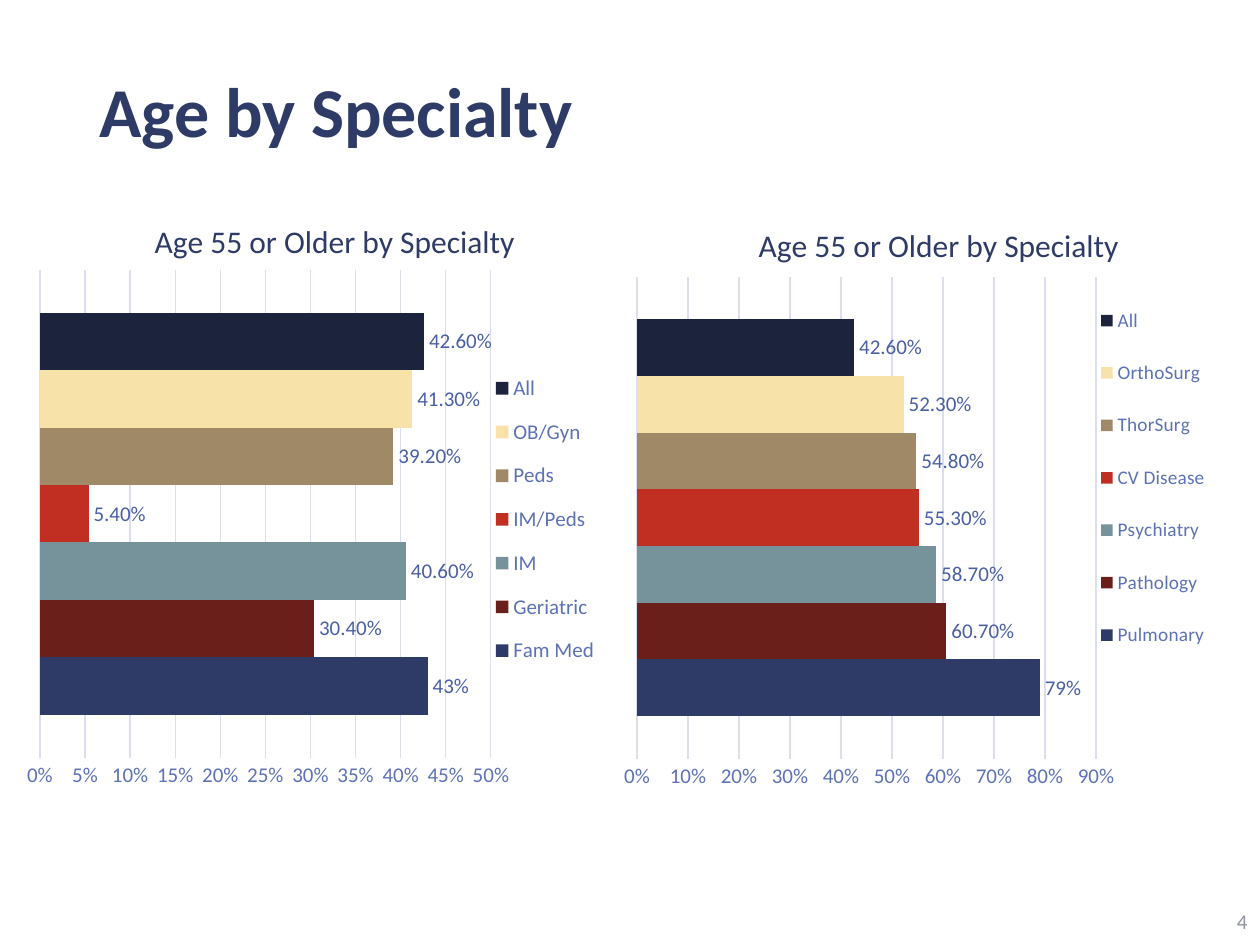
from pptx import Presentation
from pptx.chart.data import CategoryChartData
from pptx.dml.color import RGBColor
from pptx.enum.chart import XL_CHART_TYPE as ChartType, XL_LABEL_POSITION as LabelPosition
from pptx.enum.chart import XL_LEGEND_POSITION as LegendPosition, XL_TICK_MARK as TickMark
from pptx.enum.text import MSO_ANCHOR as Anchor, PP_ALIGN as Align
from pptx.oxml import parse_xml
from pptx.oxml.ns import nsdecls, qn
from pptx.util import Pt

EMU_PER_PX = 914400 // 126
NAVY = RGBColor(0x2E, 0x3B, 0x66)
AXIS_BLUE = RGBColor(0x5D, 0x72, 0xB6)
LABEL_BLUE = RGBColor(0x4A, 0x5F, 0xA4)
GRID = RGBColor(0xDA, 0xDE, 0xEE)
GRAY = RGBColor(0x8F, 0x92, 0xA0)
SERIES_COLORS = [
    NAVY,
    RGBColor(0x6A, 0x1F, 0x1A),
    RGBColor(0x76, 0x93, 0x9C),
    RGBColor(0xC0, 0x2F, 0x21),
    RGBColor(0x9F, 0x89, 0x66),
    RGBColor(0xF7, 0xE2, 0xAA),
    RGBColor(0x1C, 0x23, 0x3D),
]
PRIMARY_CARE = {
    "Fam Med": 0.43, "Geriatric": 0.304, "IM": 0.406, "IM/Peds": 0.054,
    "Peds": 0.392, "OB/Gyn": 0.413, "All": 0.426,
}
SPECIALISTS = {
    "Pulmonary": 0.79, "Pathology": 0.607, "Psychiatry": 0.587, "CV Disease": 0.553,
    "ThorSurg": 0.548, "OrthoSurg": 0.523, "All": 0.426,
}


def px(length):
    return length * EMU_PER_PX


def place(element, index, frame, box, inner=False):
    """Fix a chart part at a slide box in px; a box of two numbers sets only its corner."""
    left, top, width, height = frame
    fractions = [(box[0] - left) / width, (box[1] - top) / height]
    if len(box) == 4:
        fractions += [box[2] / width, box[3] / height]
    target = '<c:layoutTarget val="inner"/>' if inner else ""
    modes = '<c:xMode val="edge"/><c:yMode val="edge"/>'
    sizes = "".join(f'<c:{name} val="{value:.4f}"/>' for name, value in zip("xywh", fractions))
    for previous in element.findall(qn("c:layout")):
        element.remove(previous)
    element.insert(index, parse_xml(
        f'<c:layout {nsdecls("c")}><c:manualLayout>{target}{modes}{sizes}'
        "</c:manualLayout></c:layout>"))


class SlideBuilder:
    font_name = "Calibri"

    def __init__(self, slide):
        self.slide = slide

    def style(self, font, size, color, bold=False):
        font.name = self.font_name
        font.size = Pt(size)
        font.bold = bold
        font.color.rgb = color

    def text(self, box, content, size, color, bold=False, align=Align.LEFT, spacing=1.0):
        frame = self.slide.shapes.add_textbox(*map(px, box)).text_frame
        frame.word_wrap = True
        frame.vertical_anchor = Anchor.MIDDLE
        paragraph = frame.paragraphs[0]
        paragraph.alignment = align
        paragraph.line_spacing = spacing
        run = paragraph.add_run()
        run.text = content
        self.style(run.font, size, color, bold)

    def bar_chart(self, frame, values, maximum, step, title, title_at, plot, legend, legend_size):
        data = CategoryChartData(number_format="0.00%")
        data.categories = ["1"]
        for name, value in values.items():
            data.add_series(name, [value])
        chart = self.slide.shapes.add_chart(
            ChartType.BAR_CLUSTERED, *map(px, frame), data).chart
        self.style(chart.font, 12, NAVY)
        self.chart_title(chart, title)
        self.chart_axes(chart, maximum, step)
        self.chart_series(chart)
        chart.has_legend = True
        chart.legend.position = LegendPosition.RIGHT
        chart.legend.include_in_layout = False
        self.style(chart.legend.font, legend_size, AXIS_BLUE)

        chart_part = chart._chartSpace.chart
        place(chart_part.find(qn("c:title")), 1, frame, title_at)
        place(chart_part.find(qn("c:plotArea")), 0, frame, plot, inner=True)
        place(chart_part.find(qn("c:legend")), 1, frame, legend)

    def chart_title(self, chart, title):
        chart.has_title = True
        chart.chart_title.include_in_layout = False
        run = chart.chart_title.text_frame.paragraphs[0].add_run()
        run.text = title
        self.style(run.font, 18, NAVY)

    def chart_axes(self, chart, maximum, step):
        chart.category_axis.visible = False
        axis = chart.value_axis
        axis.minimum_scale, axis.maximum_scale, axis.major_unit = 0, maximum, step
        axis.major_tick_mark = axis.minor_tick_mark = TickMark.NONE
        axis.format.line.fill.background()
        axis.has_major_gridlines = True
        grid_line = axis.major_gridlines.format.line
        grid_line.color.rgb = GRID
        grid_line.width = Pt(0.75)
        axis.tick_labels.number_format = "0%"
        axis.tick_labels.number_format_is_linked = False
        self.style(axis.tick_labels.font, 12, AXIS_BLUE)

    def chart_series(self, chart):
        plot = chart.plots[0]
        plot.vary_by_categories = False
        plot.gap_width = 150
        plot.overlap = 0
        for index, (series, color) in enumerate(zip(plot.series, SERIES_COLORS)):
            series.format.fill.solid()
            series.format.fill.fore_color.rgb = color
            labels = series.data_labels
            labels.show_value = True
            labels.position = LabelPosition.OUTSIDE_END
            labels.number_format = "0.00%" if index else "0%"
            labels.number_format_is_linked = False
            self.style(labels.font, 12, LABEL_BLUE)


def main():
    presentation = Presentation()
    presentation.slide_width, presentation.slide_height = px(1260), px(945)
    builder = SlideBuilder(presentation.slides.add_slide(presentation.slide_layouts[6]))
    chart_title = "Age 55 or Older by Specialty"

    builder.text((976, 896, 284, 50), "4", 12, GRAY, align=Align.RIGHT)
    builder.bar_chart((15, 189, 630, 614), PRIMARY_CARE, 0.5, 0.05, chart_title, (149, 214),
                      plot=(40, 270, 451, 488), legend=(491, 357, 108, 325), legend_size=12)
    builder.bar_chart((612, 189, 643, 614), SPECIALISTS, 0.9, 0.1, chart_title, (753, 218),
                      plot=(637, 277, 459, 482), legend=(1096, 280, 114, 396), legend_size=11)
    builder.text((87, 23, 1086, 183), "Age by Specialty", 40, NAVY, bold=True, spacing=0.9)
    presentation.save("out.pptx")


if __name__ == "__main__":
    main()
